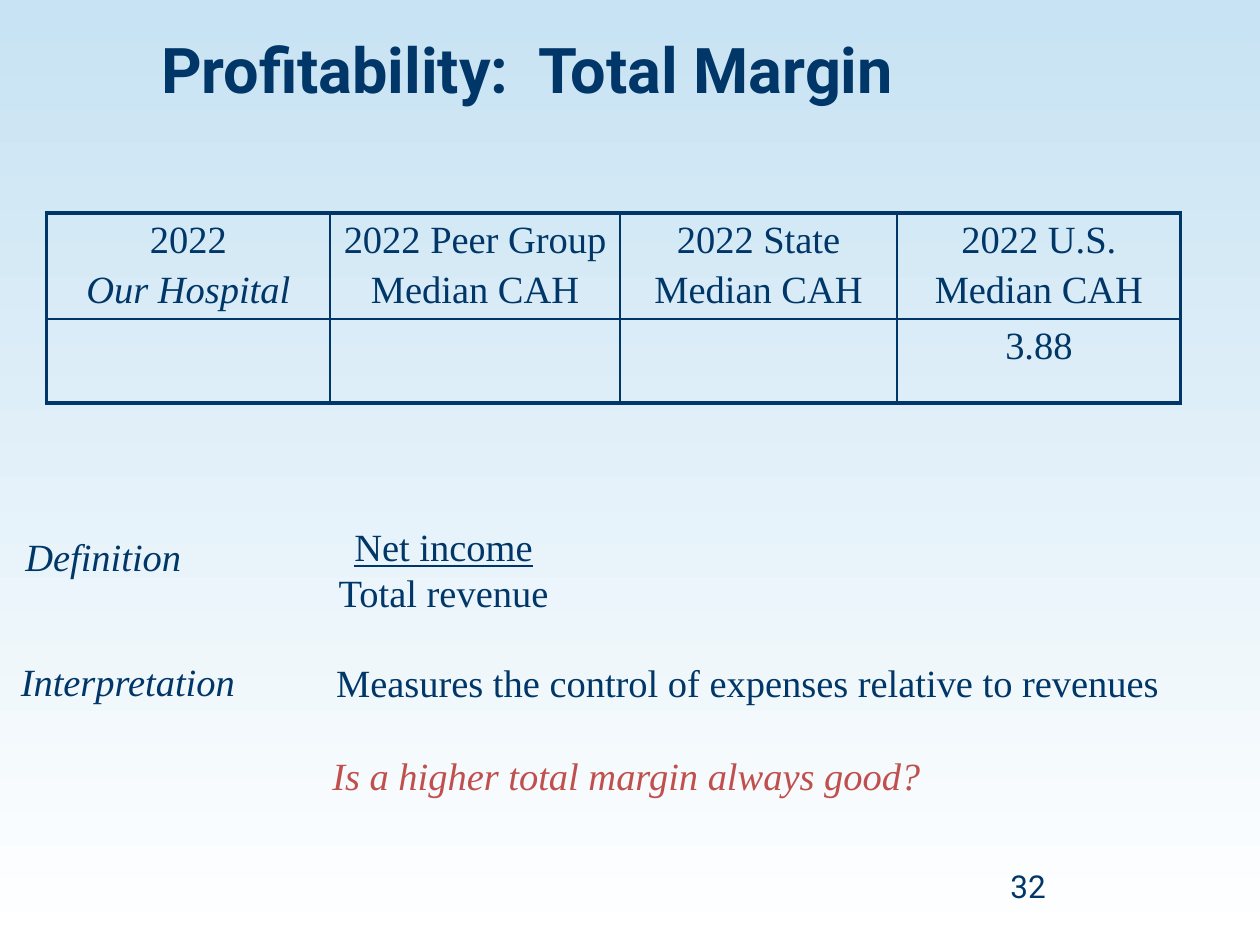
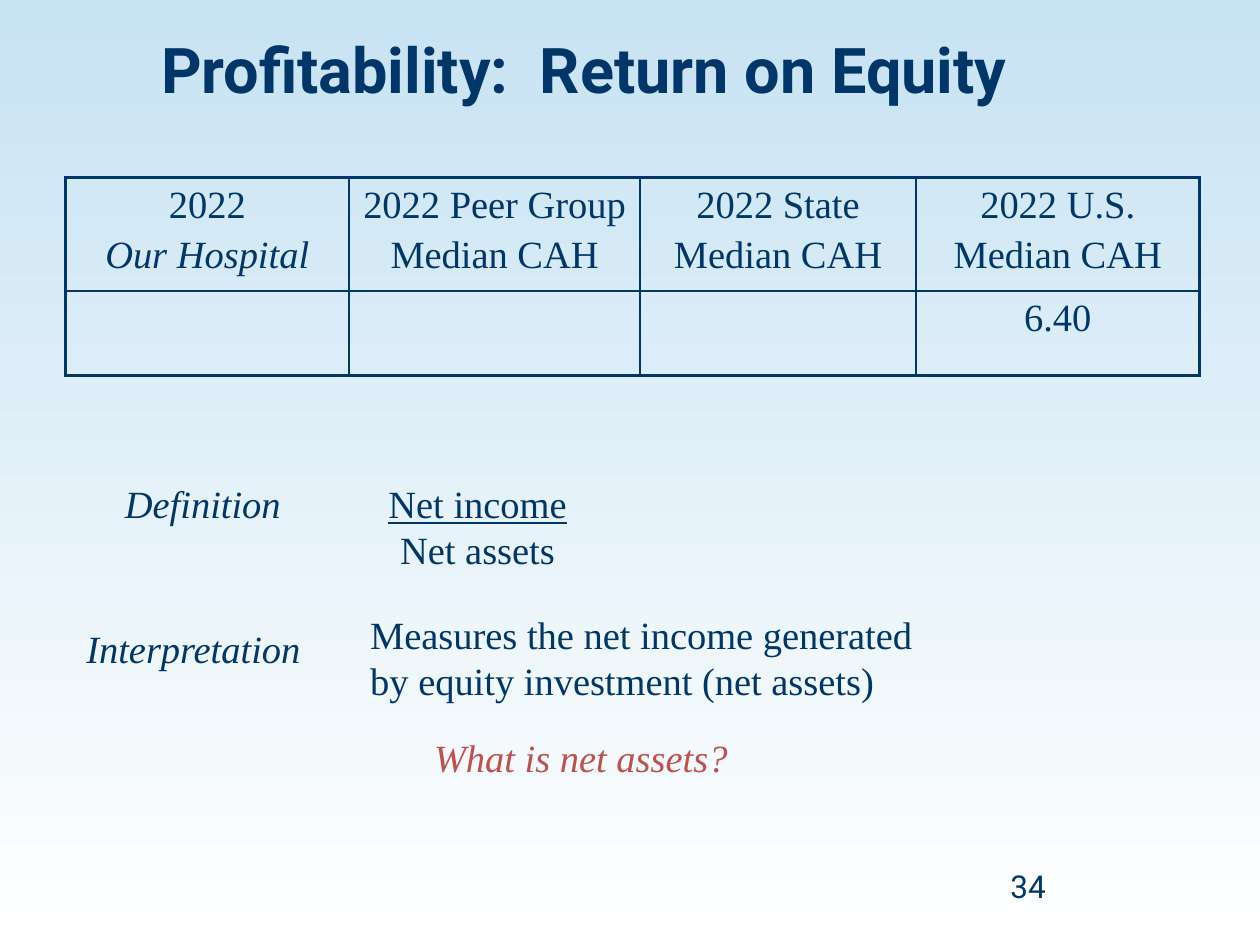
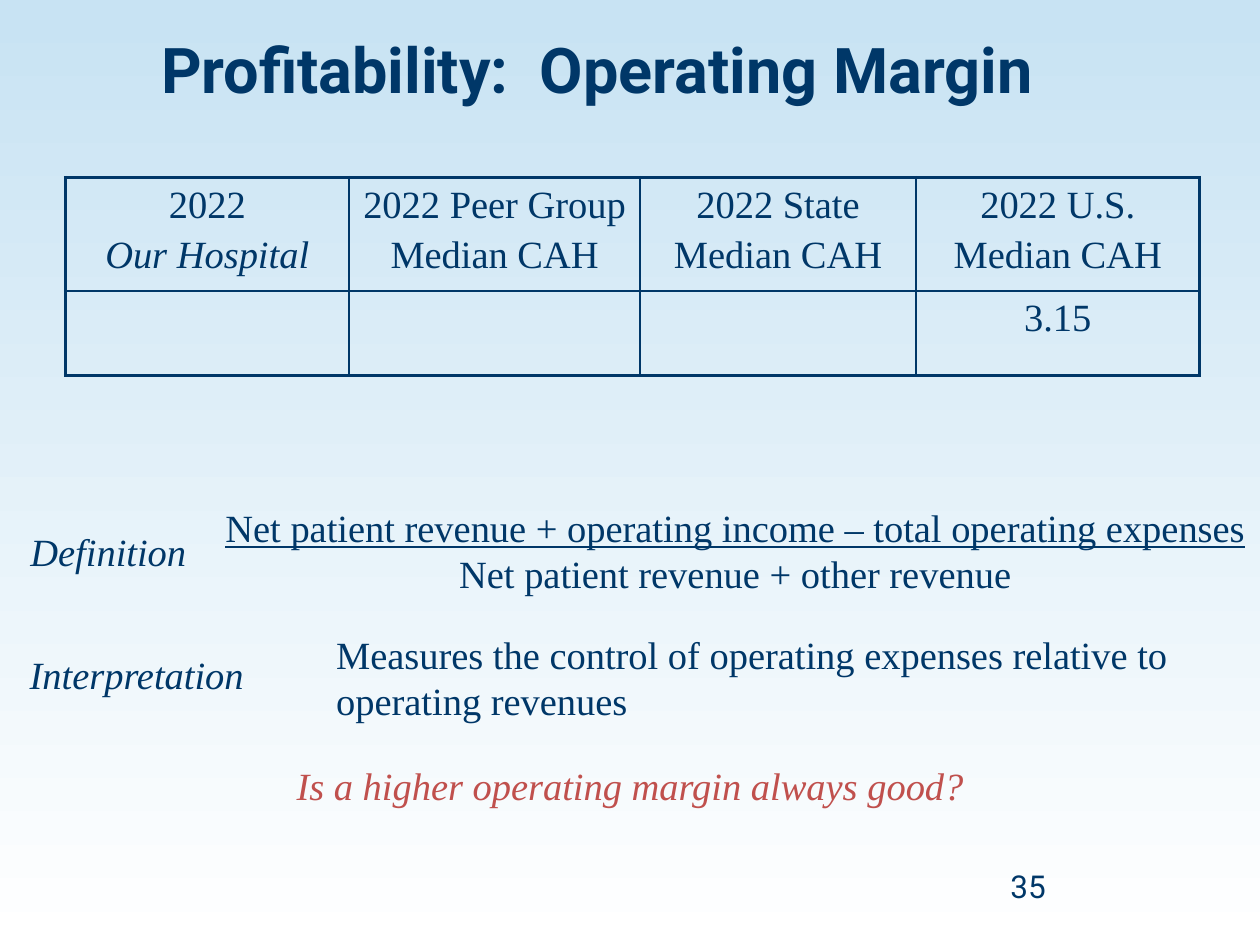
from pptx import Presentation
from pptx.dml.color import RGBColor as Rgb
from pptx.enum.text import MSO_AUTO_SIZE as Fit, PP_ALIGN as Al
from pptx.oxml.ns import qn
from pptx.util import Inches as In, Pt
from lxml.etree import SubElement as Sub

HUE = {"navy": "003768", "red": "C0504D", "sky": "C8E3F3", "white": "FFFFFF"}
SANS, SERIF = "Roboto", "Times New Roman"
THICK, THIN = 2.25, 1
HEAD = [
    ("2022", "Our Hospital"),
    ("2022 Peer Group", "Median CAH"),
    ("2022 State", "Median CAH"),
    ("2022 U.S.", "Median CAH"),
]
LOW = 0.67  # height of the value row

# Each part of a page holds its text and its box: left, top, width, height.
PAGES = [
    {
        "title": "Total Margin", "page": "32", "value": "3.88",
        "grid": (0.37, 1.69, 0.84), "cols": (2.25, 2.3, 2.2, 2.25),
        "ratio": (("Net income", "Total revenue"), (2.56, 4.1, 1.92, 0.83)),
        "sense": ("Measures the control of expenses relative to revenues",
                  (2.57, 5.18, 6.83, 0.47)),
        "define": (0.1, 4.18), "explain": (0.06, 5.17),
        "ask": ("Is a higher total margin always good?", (2.53, 5.92, 4.88, 0.47)),
    },
    {
        "title": "Return on Equity", "page": "34", "value": "6.40",
        "grid": (0.52, 1.41, 0.9), "cols": (2.25, 2.31, 2.19, 2.25),
        "ratio": (("Net income", "Net assets"), (2.83, 3.76, 1.92, 0.84)),
        "sense": ("Measures the net income generated by equity investment (net assets)",
                  (2.84, 4.8, 4.67, 0.84)),
        "define": (0.89, 3.76), "explain": (0.58, 4.91),
        "ask": ("What is net assets?", (3.33, 5.78, 2.56, 0.47)),
    },
    {
        "title": "Operating Margin", "page": "35", "value": "3.15",
        "grid": (0.52, 1.41, 0.9), "cols": (2.25, 2.31, 2.19, 2.25),
        "ratio": (("Net patient revenue + operating income – total operating expenses",
                   "Net patient revenue + other revenue"), (1.67, 3.95, 8.33, 0.84)),
        "sense": ("Measures the control of operating expenses relative to operating revenues",
                  (2.57, 4.96, 6.83, 0.84)),
        "define": (0.14, 4.14), "explain": (0.13, 5.12),
        "ask": ("Is a higher operating margin always good?", (2.18, 6, 5.64, 0.47)),
    },
]


def add_run(para, text, size=22, face=SERIF, hue="navy", **style):
    run = para.add_run()
    run.text = text
    font = run.font
    font.size, font.name = Pt(size), face
    font.color.rgb = Rgb.from_string(HUE[hue])
    for key, val in style.items():
        setattr(font, key, val)


def add_box(slide, box, wrap=True):
    frame = slide.shapes.add_textbox(*map(In, box)).text_frame
    frame.word_wrap = wrap
    frame.auto_size = Fit.NONE
    return frame


def add_text(slide, text, box, align=Al.LEFT, wrap=True, **style):
    para = add_box(slide, box, wrap).paragraphs[0]
    para.alignment = align
    add_run(para, text, **style)


def add_ratio(slide, parts, box):
    """Stack an underlined numerator on its denominator."""
    frame = add_box(slide, box)
    for para, text, line in zip((frame.paragraphs[0], frame.add_paragraph()),
                                parts, (True, False)):
        para.alignment = Al.CENTER
        add_run(para, text, underline=line)


def add_edge(cell, side, width):
    edge = Sub(cell._tc.get_or_add_tcPr(), qn(f"a:ln{side}"), w=str(Pt(width)))
    Sub(Sub(edge, qn("a:solidFill")), qn("a:srgbClr"), val=HUE["navy"])


def fill_cell(cell, lines):
    frame = cell.text_frame
    for i, text in enumerate(lines):
        para = frame.add_paragraph() if i else frame.paragraphs[0]
        para.alignment = Al.CENTER
        if i:
            gap = Sub(para._p.get_or_add_pPr(), qn("a:spcBef"))
            Sub(gap, qn("a:spcPct"), val="20000")
        add_run(para, text, italic=text == "Our Hospital")


def add_grid(slide, page):
    left, top, high = page["grid"]
    cols, rows = page["cols"], (high, LOW)
    body = [()] * (len(cols) - 1) + [(page["value"],)]
    table = slide.shapes.add_table(len(rows), len(cols), In(left), In(top),
                                   In(sum(cols)), In(sum(rows))).table
    table.first_row = table.horz_banding = False
    for col, width in zip(table.columns, cols):
        col.width = In(width)
    for r, (height, texts) in enumerate(zip(rows, (HEAD, body))):
        table.rows[r].height = In(height)
        for c, lines in enumerate(texts):
            cell = table.cell(r, c)
            fill_cell(cell, lines)
            rim = {"L": c == 0, "R": c == len(cols) - 1,
                   "T": r == 0, "B": r == len(rows) - 1}
            for side, outer in rim.items():
                add_edge(cell, side, THICK if outer else THIN)
            cell.fill.background()


def paint(master):
    fill = master.background.fill
    fill.gradient()
    fill.gradient_angle = 270
    for stop, hue, at in zip(fill.gradient_stops, ("sky", "white"), (0.01, 1)):
        stop.color.rgb = Rgb.from_string(HUE[hue])
        stop.position = at


def add_page(deck, page):
    slide = deck.slides.add_slide(deck.slide_layouts[6])
    add_text(slide, "Profitability:  " + page["title"], (1.18, 0.19, 8.26, 1.09),
             size=36, face=SANS, bold=True)
    add_grid(slide, page)
    add_text(slide, page["page"], (7.92, 6.83, 2.08, 0.5), size=18, face=SANS)
    add_ratio(slide, *page["ratio"])
    add_text(slide, *page["sense"])
    tags = (("Definition", (*page["define"], 1.44, 0.47), "navy"),
            ("Interpretation", (*page["explain"], 1.91, 0.47), "navy"),
            (*page["ask"], "red"))
    for text, box, hue in tags:
        add_text(slide, text, box, Al.CENTER, wrap=False, hue=hue, italic=True)


def main():
    deck = Presentation()
    deck.slide_width, deck.slide_height = In(10), In(7.5)
    paint(deck.slide_master)
    for page in PAGES:
        add_page(deck, page)
    deck.save("out.pptx")


if __name__ == "__main__":
    main()
